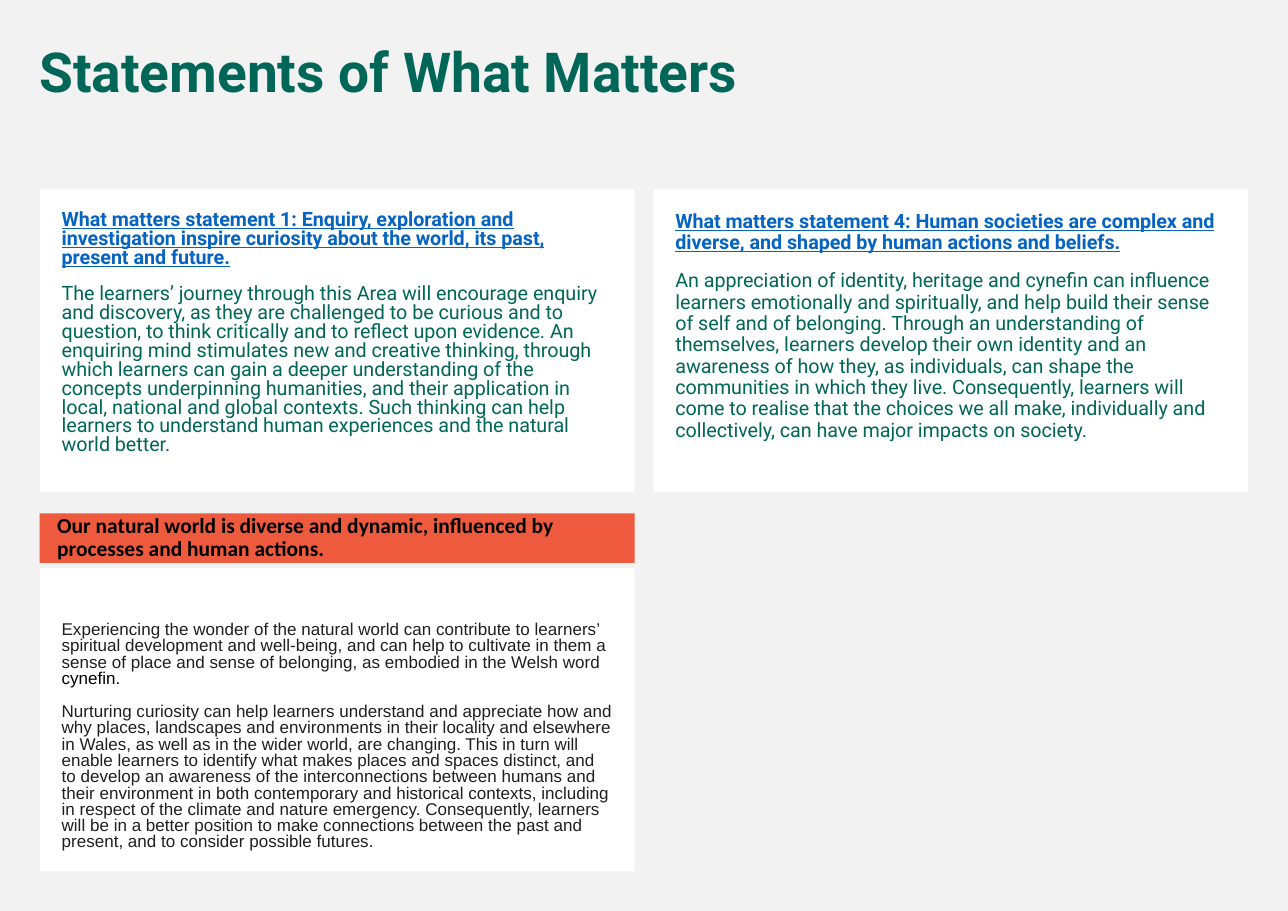
from pptx import Presentation
from pptx import util as u
from pptx.dml.color import RGBColor
from pptx.enum import shapes, text

PAGE_GREY = RGBColor(0xF2, 0xF2, 0xF2)
WHITE = RGBColor(0xFF, 0xFF, 0xFF)
BLACK = RGBColor(0x00, 0x00, 0x00)
INK = RGBColor(0x1F, 0x1F, 0x1F)
GREEN = RGBColor(0x00, 0x67, 0x58)
BLUE = RGBColor(0x05, 0x63, 0xC1)
CORAL = RGBColor(0xED, 0x5A, 0x3E)

PAGE_WIDTH, PAGE_HEIGHT = 11.69, 8.27
MARGIN, COLUMN_WIDTH, COLUMN_GAP = 0.36, 5.4, 0.17
UPPER_ROW, BANNER_ROW, LOWER_ROW = 1.72, 4.66, 5.16
CARD_HEIGHT, BANNER_HEIGHT = 2.75, 0.45
CARD_INSETS = (0.2, 0.2, 0.2, 0.2)

TITLE = dict(name="Roboto", size=u.Pt(36), bold=True, color=GREEN)
HEADING = dict(name="Roboto", size=u.Pt(12.9), bold=True, underline=True, color=BLUE)
STATEMENT = dict(name="Roboto", size=u.Pt(12.9), color=GREEN)
BANNER = dict(name="Calibri", size=u.Pt(14), bold=True, color=BLACK)
DETAIL = dict(name="Arial", size=u.Pt(11.1), color=INK)
TERM = dict(DETAIL, color=BLACK)

ENQUIRY = [
    [("What matters statement 1: Enquiry, exploration and investigation inspire "
      "curiosity about the world, its past, present and future.", HEADING)],
    [("The learners’ journey through this Area will encourage enquiry and discovery, "
      "as they are challenged to be curious and to question, to think critically and "
      "to reflect upon evidence. An enquiring mind stimulates new and creative thinking, "
      "through which learners can gain a deeper understanding of the concepts "
      "underpinning humanities, and their application in local, national and global "
      "contexts. Such thinking can help learners to understand human experiences and "
      "the natural world better.", STATEMENT)],
]
SOCIETIES = [
    [("What matters statement 4: Human societies are complex and diverse, and shaped "
      "by human actions and beliefs.", HEADING)],
    [("An appreciation of identity, heritage and cynefin can influence learners "
      "emotionally and spiritually, and help build their sense of self and of belonging. "
      "Through an understanding of themselves, learners develop their own identity and "
      "an awareness of how they, as individuals, can shape the communities in which they "
      "live. Consequently, learners will come to realise that the choices we all make, "
      "individually and collectively, can have major impacts on society.", STATEMENT)],
]
NATURAL_WORLD = [
    [("Our natural world is diverse and dynamic, influenced by processes and human "
      "actions.", BANNER)],
]
WONDER = [
    [("Experiencing the wonder of the natural world can contribute to learners’ spiritual "
      "development and well-being, and can help to cultivate in them a sense of place and "
      "sense of belonging, as embodied in the Welsh word ", DETAIL), ("cynefin.", TERM)],
    [("Nurturing curiosity can help learners understand and appreciate how and why places, "
      "landscapes and environments in their locality and elsewhere in Wales, as well as in "
      "the wider world, are changing. This in turn will enable learners to identify what "
      "makes places and spaces distinct, and to develop an awareness of the "
      "interconnections between humans and their environment in both contemporary and "
      "historical contexts, including in respect of the climate and nature emergency. "
      "Consequently, learners will be in a better position to make connections between the "
      "past and present, and to consider possible futures.", DETAIL)],
]


def column_box(column, top, height):
    left = MARGIN + column * (COLUMN_WIDTH + COLUMN_GAP)
    return left, top, COLUMN_WIDTH, height


def write_paragraphs(frame, paragraphs, line_spacing, insets, anchor):
    sides = ("margin_left", "margin_top", "margin_right", "margin_bottom")
    layout = dict(zip(sides, map(u.Inches, insets)), word_wrap=True, vertical_anchor=anchor)
    for key, value in layout.items():
        setattr(frame, key, value)
    for index, pieces in enumerate(paragraphs):
        paragraph = frame.add_paragraph() if index else frame.paragraphs[0]
        spacing = dict(alignment=text.PP_ALIGN.LEFT, line_spacing=line_spacing,
                       space_before=u.Pt(11))
        for key, value in spacing.items():
            setattr(paragraph, key, value)
        for wording, style in pieces:
            run = paragraph.add_run()
            run.text = wording
            for key, value in style.items():
                if key == "color":
                    run.font.color.rgb = value
                else:
                    setattr(run.font, key, value)


def add_title(slide, box):
    title = slide.shapes.add_textbox(*map(u.Inches, box))
    write_paragraphs(title.text_frame, [[("Statements of What Matters", TITLE)]], 0.9,
                     (0.1, 0.05, 0.1, 0.05), text.MSO_ANCHOR.TOP)


def add_panel(slide, box, fill, paragraphs, line_spacing, insets=CARD_INSETS,
              anchor=text.MSO_ANCHOR.TOP):
    panel = slide.shapes.add_shape(shapes.MSO_SHAPE.RECTANGLE, *map(u.Inches, box))
    panel.shadow.inherit = False
    panel.fill.solid()
    panel.fill.fore_color.rgb = fill
    panel.line.fill.background()
    write_paragraphs(panel.text_frame, paragraphs, line_spacing, insets, anchor)


def build_statements_slide(deck):
    slide = deck.slides.add_slide(deck.slide_layouts[6])
    slide.background.fill.solid()
    slide.background.fill.fore_color.rgb = PAGE_GREY
    add_panel(slide, column_box(0, UPPER_ROW, CARD_HEIGHT), WHITE, ENQUIRY, 0.8)
    add_panel(slide, column_box(0, BANNER_ROW, BANNER_HEIGHT), CORAL, NATURAL_WORLD, 0.9,
              (0.16, 0.05, 0.1, 0.05), text.MSO_ANCHOR.MIDDLE)
    add_panel(slide, column_box(1, UPPER_ROW, CARD_HEIGHT), WHITE, SOCIETIES, 0.9)
    add_panel(slide, column_box(0, LOWER_ROW, CARD_HEIGHT), WHITE, WONDER, 0.8,
              (0.2, 0.49, 0.2, 0.2))
    add_title(slide, (MARGIN - 0.1, MARGIN, 11.08, 0.65))


def main():
    deck = Presentation()
    deck.slide_width = u.Inches(PAGE_WIDTH)
    deck.slide_height = u.Inches(PAGE_HEIGHT)
    build_statements_slide(deck)
    deck.save("out.pptx")


if __name__ == "__main__":
    main()
